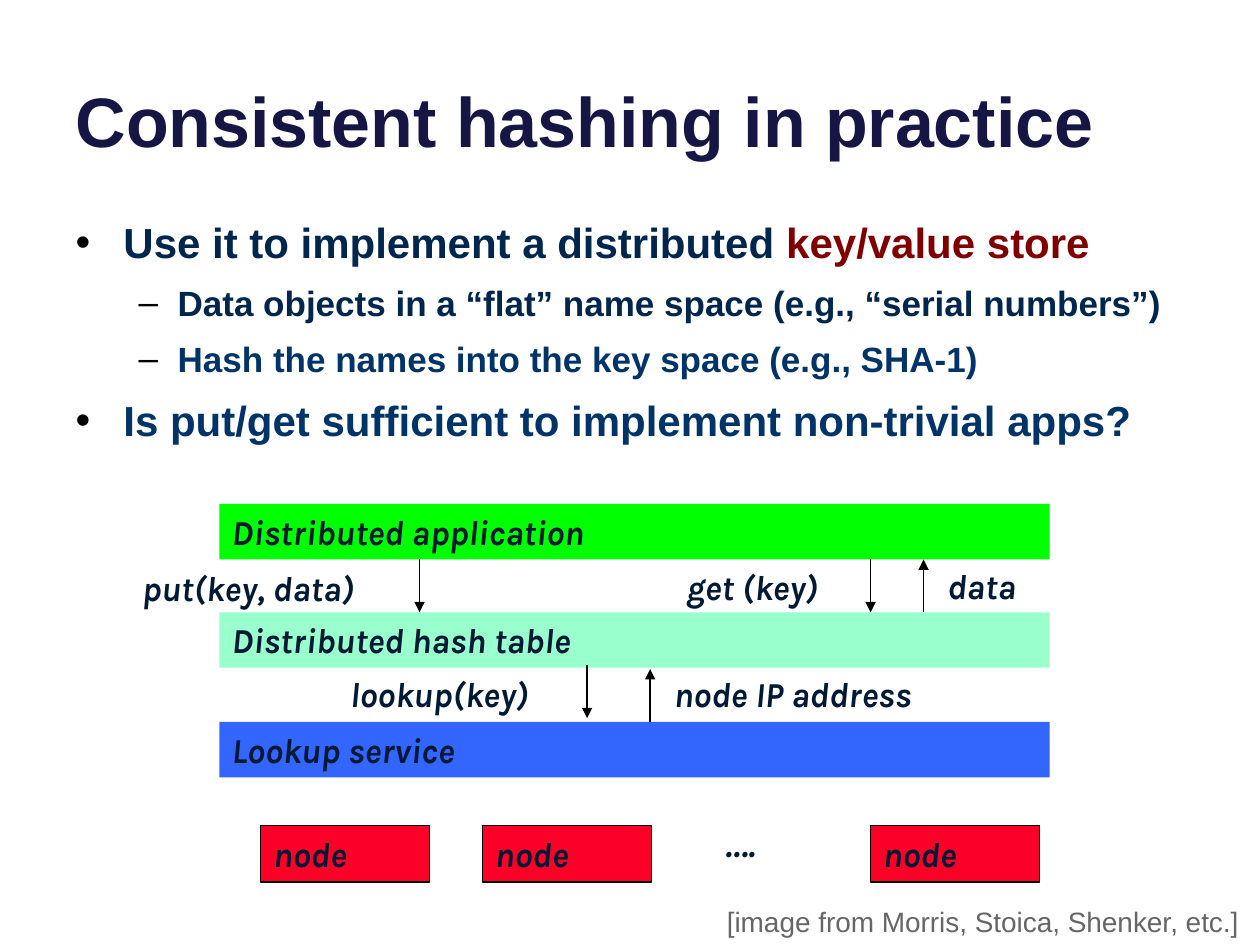
"""Build the slide on consistent hashing in practice."""
from lxml import etree
from pptx import Presentation
from pptx.dml.color import RGBColor
from pptx.enum.shapes import MSO_CONNECTOR, MSO_SHAPE
from pptx.enum.text import MSO_ANCHOR, MSO_AUTO_SIZE, PP_ALIGN
from pptx.oxml.ns import qn
from pptx.util import Pt

RECT = MSO_SHAPE.RECTANGLE
LINE = MSO_CONNECTOR.STRAIGHT
TOP, MIDDLE, BOTTOM = MSO_ANCHOR.TOP, MSO_ANCHOR.MIDDLE, MSO_ANCHOR.BOTTOM
LEFT = PP_ALIGN.LEFT
FIXED = MSO_AUTO_SIZE.NONE
PX = 9144
INK = "001934"


def color(code):
    return RGBColor.from_string(code)


def style(run, size, code, face="Arial", bold=True, slant=False):
    font = run.font
    font.size, font.name = Pt(size), face
    font.bold, font.italic = bold, slant
    font.color.rgb = color(code)


deck = Presentation()
deck.slide_width, deck.slide_height = 1000 * PX, 750 * PX
slide = deck.slides.add_slide(deck.slide_layouts[1])
shapes = slide.shapes

title, body = slide.placeholders
for holder, top, high in ((title, -37, 170), (body, 167, 217)):
    holder.left, holder.top = 50 * PX, top * PX
    holder.width, holder.height = 900 * PX, high * PX
    holder.text_frame.auto_size = FIXED

title.text_frame.text = "Consistent hashing in practice"
title.text_frame.vertical_anchor = BOTTOM
head = title.text_frame.paragraphs[0]
head.alignment = LEFT
style(head.runs[0], 40, "161645")

points = [
    (0, [("Use it to implement a distributed ", "00264D"), ("key/value store", "800000")]),
    (1, [("Data objects in a “flat” name space (e.g., “serial numbers”)", "00264D")]),
    (1, [("Hash the names into the key space (e.g., SHA-1)", "003367")]),
    (0, [("Is put/get sufficient to implement non-trivial apps?", "003367")]),
]
levels = [(24, 9, 38, 38, "•"), (20, 8, 81, 31, "–")]
frame = body.text_frame
frame.text = "\n".join("".join(text for text, code in parts) for level, parts in points)
for para, (level, parts) in zip(frame.paragraphs, points):
    size, gap, margin, hang, mark = levels[level]
    para.level = level
    para.space_before = Pt(gap)
    para.text = parts[0][0]
    for text, code in parts[1:]:
        para.add_run().text = text
    for run, (text, code) in zip(para.runs, parts):
        style(run, size, code)
    props = para._p.get_or_add_pPr()
    props.set("marL", str(margin * PX))
    props.set("indent", str(-hang * PX))
    tint = etree.SubElement(props, qn("a:buClr"))
    etree.SubElement(tint, qn("a:srgbClr"), val="000000")
    etree.SubElement(props, qn("a:buChar"), char=mark)

boxes = [
    ("Distributed application", 174, 400, 659, 44, "00FF00", TOP),
    ("Distributed hash table", 174, 486, 659, 44, "99FFCC", TOP),
    ("Lookup service", 174, 573, 659, 44, "3366FF", TOP),
]
boxes += [("node", left, 655, 134, 45, "FC0128", MIDDLE) for left in (207, 383, 691)]
for text, left, top, wide, high, fill, anchor in boxes:
    box = shapes.add_shape(RECT, left * PX, top * PX, wide * PX, high * PX)
    box.shadow.inherit = False
    box.fill.solid()
    box.fill.fore_color.rgb = color(fill)
    if text == "node":
        box.line.color.rgb = color("000000")
        box.line.width = Pt(0.75)
    else:
        box.line.fill.background()
    frame = box.text_frame
    frame.text = text
    frame.vertical_anchor = anchor
    frame.paragraphs[0].alignment = LEFT
    style(frame.paragraphs[0].runs[0], 20, INK, "Karla", slant=True)

labels = [
    ("put(key, data)", 103, 445, 231),
    ("get (key)", 535, 444, 158),
    ("data", 742, 443, 91),
    ("lookup(key)", 268, 529, 199),
    ("node IP address", 525, 529, 256),
    ("….", 566, 648, 57),
]
for text, left, top, wide in labels:
    label = shapes.add_textbox(left * PX, top * PX, wide * PX, 44 * PX)
    frame = label.text_frame
    frame.word_wrap = True
    frame.text = text
    style(frame.paragraphs[0].runs[0], 20, INK, "Karla", slant=True)

arrows = [(333, 444, 486), (691, 444, 486), (733, 486, 444), (466, 528, 570), (516, 573, 531)]
for x, start, end in arrows:
    arrow = shapes.add_connector(LINE, x * PX, start * PX, x * PX, end * PX)
    arrow.line.color.rgb = color("000000")
    arrow.line.width = Pt(0.75)
    etree.SubElement(arrow.line._get_or_add_ln(), qn("a:tailEnd"), type="triangle")
    etree.SubElement(arrow._element.spPr, qn("a:effectLst"))

credit = shapes.add_textbox(567 * PX, 713 * PX, 432 * PX, 37 * PX)
credit.text_frame.text = "[image from Morris, Stoica, Shenker, etc.]"
style(credit.text_frame.paragraphs[0].runs[0], 16, "666666", bold=False)

deck.save("out.pptx")
